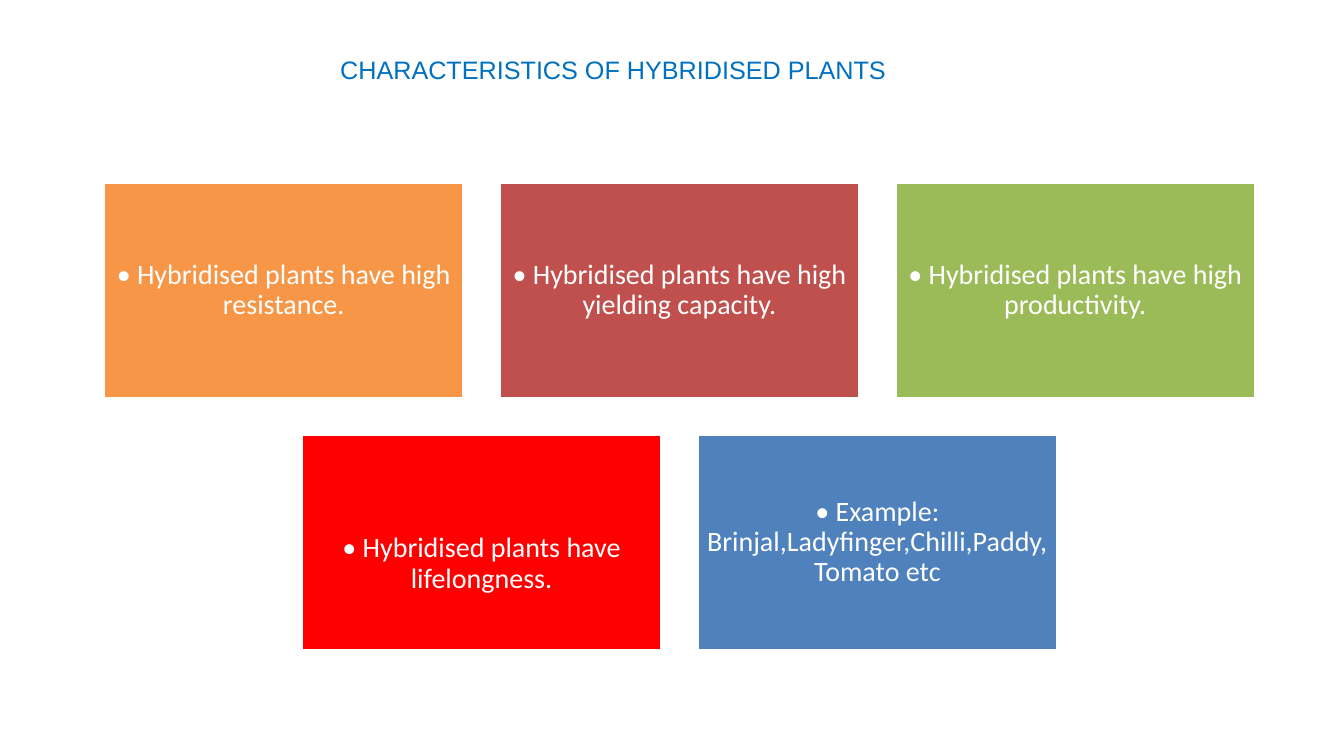
import pptx
import pptx.dml.color
import pptx.enum.shapes
import pptx.enum.text
import pptx.util

Pt = pptx.util.Pt

TITLE = "CHARACTERISTICS OF HYBRIDISED PLANTS"
# Rows of cards: text, fill, extra space above the text
CARD_ROWS = [
    [
        ("• Hybridised plants have high resistance.", "F79646", 0),
        ("• Hybridised plants have high yielding capacity.", "C0504D", 0),
        ("• Hybridised plants have high productivity.", "9BBB59", 0),
    ],
    [
        ("• Hybridised plants have lifelongness.", "FF0000", 30.7),
        ("• Example: Brinjal,Ladyfinger,Chilli,Paddy, Tomato etc", "4F81BD", 0),
    ],
]

SLIDE_WIDTH, SLIDE_HEIGHT = 960, 540
GRID_LEFT, GRID_TOP = 74.2, 130.4
CARD_WIDTH, CARD_HEIGHT = 257, 154.2
GAP = 25.7
INSET = 6


def color(hex_string):
    return pptx.dml.color.RGBColor.from_string(hex_string)


def write(paragraph, text, font_name, size, hex_string):
    """Add one centred run."""
    paragraph.alignment = pptx.enum.text.PP_ALIGN.CENTER
    run = paragraph.add_run()
    run.text = text
    run.font.name = font_name
    run.font.size = Pt(size)
    run.font.color.rgb = color(hex_string)


def add_title(slide):
    box = slide.shapes.add_textbox(Pt(198), Pt(35.5), Pt(480), Pt(29))
    box.text_frame.word_wrap = True
    write(box.text_frame.paragraphs[0], TITLE, "Arial", 18, "0070C0")


def add_card(slide, left, top, text, fill, space_above):
    card = slide.shapes.add_shape(
        pptx.enum.shapes.MSO_SHAPE.RECTANGLE,
        Pt(left), Pt(top), Pt(CARD_WIDTH), Pt(CARD_HEIGHT))
    card.shadow.inherit = False
    card.fill.solid()
    card.fill.fore_color.rgb = color(fill)
    card.line.color.rgb = color("FFFFFF")
    card.line.width = Pt(2)

    frame = card.text_frame
    frame.word_wrap = True
    frame.vertical_anchor = pptx.enum.text.MSO_ANCHOR.MIDDLE
    frame.margin_left = frame.margin_right = frame.margin_bottom = Pt(INSET)
    frame.margin_top = Pt(INSET + space_above)
    paragraph = frame.paragraphs[0]
    paragraph.line_spacing = 0.9
    write(paragraph, text, "Calibri", 20, "FFFFFF")


def add_cards(slide):
    """Place the rows of cards, each shorter row centred under the widest."""
    column_step, row_step = CARD_WIDTH + GAP, CARD_HEIGHT + GAP
    columns = max(len(row) for row in CARD_ROWS)
    for row_index, row in enumerate(CARD_ROWS):
        row_left = GRID_LEFT + (columns - len(row)) * column_step / 2
        top = GRID_TOP + row_index * row_step
        for column, card in enumerate(row):
            add_card(slide, row_left + column * column_step, top, *card)


def main():
    presentation = pptx.Presentation()
    presentation.slide_width = Pt(SLIDE_WIDTH)
    presentation.slide_height = Pt(SLIDE_HEIGHT)
    slide = presentation.slides.add_slide(presentation.slide_layouts[6])
    add_title(slide)
    add_cards(slide)
    presentation.save("out.pptx")


if __name__ == "__main__":
    main()
